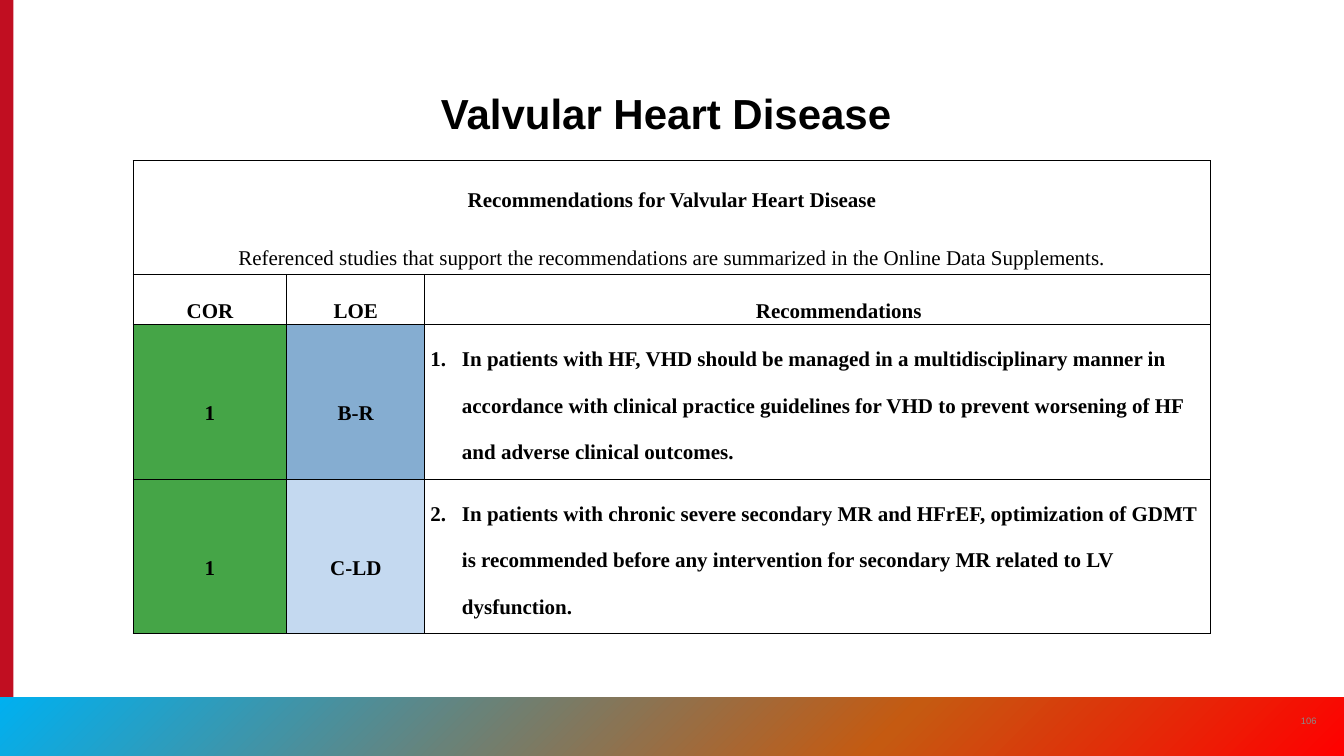
from dataclasses import dataclass

from pptx import Presentation
from pptx.dml.color import RGBColor
from pptx.enum.shapes import MSO_SHAPE
from pptx.enum.text import MSO_ANCHOR, PP_ALIGN
from pptx.oxml import parse_xml
from pptx.oxml.ns import nsdecls
from pptx.shapes.autoshape import Shape
from pptx.slide import Slide
from pptx.table import Table, _Cell
from pptx.text.text import TextFrame, _Paragraph
from pptx.util import Pt

SERIF = "Times New Roman"
STOPS = [(0, "00B0F0"), (66, "C55A11"), (100, "FF0000")]
WIDTHS = [132, 118, 674]
HEIGHTS = [97.2, 39.6, 132.5, 132.5]


@dataclass
class Advice:
    cor: str
    loe: str
    shade: str
    text: str


ADVICE = [
    Advice("1", "B-R", "85ADD1",
           "In patients with HF, VHD should be managed in a multidisciplinary manner in "
           "accordance with clinical practice guidelines for VHD to prevent worsening of HF "
           "and adverse clinical outcomes."),
    Advice("1", "C-LD", "C4D9F0",
           "In patients with chronic severe secondary MR and HFrEF, optimization of GDMT "
           "is recommended before any intervention for secondary MR related to LV "
           "dysfunction."),
]


def color(code: str) -> RGBColor:
    return RGBColor.from_string(code)


def write(frame: TextFrame, text: str, *, font: str = SERIF, size: float = 18,
          bold: bool = True, ink: str = "000000", align: PP_ALIGN = PP_ALIGN.CENTER,
          line: float = 2, after: float = 0, more: bool = False) -> _Paragraph:
    """Fill the first paragraph, or add another one when more is set."""
    para = frame.add_paragraph() if more else frame.paragraphs[0]
    para.alignment = align
    para.line_spacing = line
    para.space_after = Pt(after)
    run = para.add_run()
    run.text = text
    run.font.name = font
    run.font.size = Pt(size)
    run.font.bold = bold
    run.font.color.rgb = color(ink)
    return para


def indent(para: _Paragraph, left: float, first: float) -> None:
    props = para._p.get_or_add_pPr()
    props.set("marL", str(Pt(left)))
    props.set("indent", str(Pt(first)))


def number(para: _Paragraph, start: int) -> None:
    indent(para, 27, -27)
    props = para._p.get_or_add_pPr()
    props.append(parse_xml(
        f'<a:buAutoNum {nsdecls("a")} type="arabicPeriod" startAt="{start}"/>'))
    props.append(parse_xml(
        f'<a:tabLst {nsdecls("a")}><a:tab pos="{Pt(18)}" algn="l"/></a:tabLst>'))


def bar(slide: Slide, left: float, top: float, width: float, height: float) -> Shape:
    """Add a rectangle without line or shadow."""
    shape = slide.shapes.add_shape(
        MSO_SHAPE.RECTANGLE, Pt(left), Pt(top), Pt(width), Pt(height))
    shape.shadow.inherit = False
    shape.line.fill.background()
    return shape


def blend(shape: Shape) -> None:
    """Fill the shape with the three-colour gradient."""
    shape.fill.gradient()
    grad = shape._element.spPr.find(".//{*}gradFill")
    stops = "".join(f'<a:gs pos="{pos * 1000}"><a:srgbClr val="{code}"/></a:gs>'
                    for pos, code in STOPS)
    grad.getparent().replace(grad, parse_xml(
        f'<a:gradFill {nsdecls("a")} rotWithShape="1"><a:gsLst>{stops}</a:gsLst>'
        '<a:lin ang="2700000" scaled="0"/></a:gradFill>'))


def label(slide: Slide, left: float, top: float, width: float, height: float) -> TextFrame:
    frame = slide.shapes.add_textbox(Pt(left), Pt(top), Pt(width), Pt(height)).text_frame
    frame.word_wrap = True
    return frame


def dress(cell: _Cell, fill: str | None = "FFFFFF",
          anchor: MSO_ANCHOR = MSO_ANCHOR.MIDDLE) -> TextFrame:
    """Set margins, borders and fill of a cell and return its text frame."""
    cell.margin_left = cell.margin_right = Pt(5)
    cell.margin_top = cell.margin_bottom = Pt(0)
    cell.vertical_anchor = anchor
    props = cell._tc.get_or_add_tcPr()
    for side in "LRTB":
        props.append(parse_xml(
            f'<a:ln{side} {nsdecls("a")} w="{Pt(1)}"><a:solidFill>'
            f'<a:srgbClr val="000000"/></a:solidFill></a:ln{side}>'))
    if fill:
        cell.fill.solid()
        cell.fill.fore_color.rgb = color(fill)
    else:
        cell.fill.background()
    return cell.text_frame


def fill_head(table: Table) -> None:
    table.cell(0, 0).merge(table.cell(0, 2))
    frame, *_ = [dress(table.cell(0, col)) for col in range(3)]
    write(frame, "Recommendations for Valvular Heart Disease", after=10)
    write(frame, "Referenced studies that support the recommendations are summarized "
          "in the Online Data Supplements.", bold=False, after=10, more=True)
    for col, name in enumerate(["COR", "LOE", "Recommendations"]):
        para = write(dress(table.cell(1, col)), name)
    indent(para, 54, -18)


def fill_body(table: Table) -> None:
    for num, item in enumerate(ADVICE, 1):
        row = num + 1
        write(dress(table.cell(row, 0), "45A547"), item.cor)
        write(dress(table.cell(row, 1), item.shade), item.loe)
        frame = dress(table.cell(row, 2), None, MSO_ANCHOR.TOP)
        number(write(frame, item.text, align=PP_ALIGN.LEFT), num)


def main() -> None:
    deck = Presentation()
    deck.slide_width, deck.slide_height = Pt(1152), Pt(648)
    slide = deck.slides.add_slide(deck.slide_layouts[6])

    edge = bar(slide, 0, 0, 11.5, 648)
    edge.fill.solid()
    edge.fill.fore_color.rgb = color("C10E21")
    blend(bar(slide, 0, 597.6, 1152, 50.4))

    page = label(slide, 1104.5, 600.5, 34.5, 34.5)
    page.vertical_anchor = MSO_ANCHOR.MIDDLE
    write(page, "106", font="Arial", size=8, bold=False, ink="8A8B8A", line=1)

    title = label(slide, 344, 66, 464, 42)
    title.margin_top = Pt(13.6)
    write(title, "Valvular Heart Disease ", font="Arial", size=36, line=0.9)

    table = slide.shapes.add_table(
        len(HEIGHTS), len(WIDTHS), Pt(114), Pt(138),
        Pt(sum(WIDTHS)), Pt(sum(HEIGHTS))).table
    table.first_row = table.horz_banding = False
    for col, width in zip(table.columns, WIDTHS):
        col.width = Pt(width)
    for row, height in zip(table.rows, HEIGHTS):
        row.height = Pt(height)
    fill_head(table)
    fill_body(table)
    deck.save("out.pptx")


if __name__ == "__main__":
    main()
